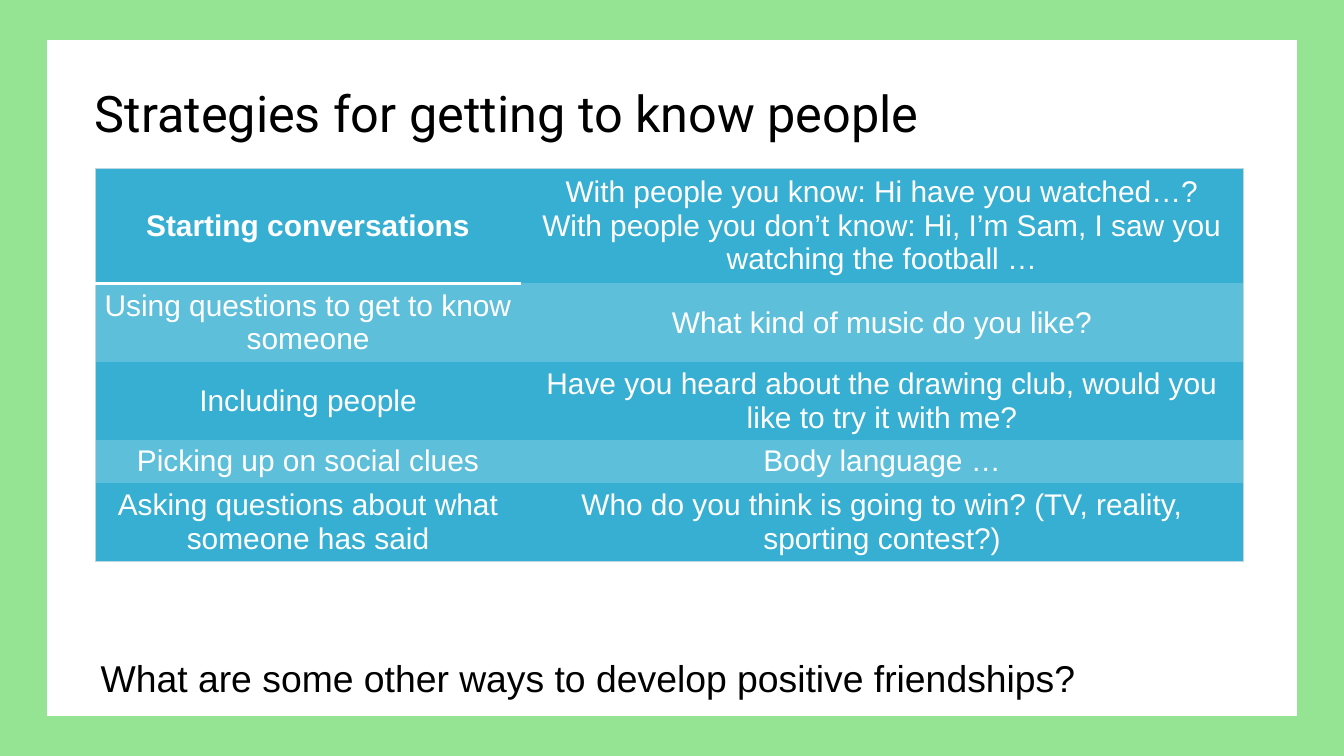
from dataclasses import dataclass

from lxml.etree import SubElement
from pptx import Presentation
from pptx.dml.color import RGBColor
from pptx.enum.text import MSO_ANCHOR, MSO_AUTO_SIZE, PP_ALIGN
from pptx.oxml.ns import qn
from pptx.util import Pt


@dataclass(frozen=True)
class Theme:
    """Colours, fonts and type sizes of the slide."""
    background: str = "94E494"
    panel: str = "FFFFFF"
    ink: str = "000000"
    table_text: str = "FFFFFF"
    bands: tuple = ("36AFD2", "5EBFDB")
    outline: str = "BCD7E1"
    header_rule: str = "FFFFFF"
    title_font: str = "Roboto"
    body_font: str = "Arial"
    title_size: int = 54
    table_size: int = 32
    question_size: int = 40


THEME = Theme()
STRATEGIES = [
    ("Starting conversations",
     "With people you know: Hi have you watched…?\n"
     "With people you don’t know: Hi, I’m Sam, I saw you watching the football …"),
    ("Using questions to get to know someone", "What kind of music do you like?"),
    ("Including people",
     "Have you heard about the drawing club, would you like to try it with me?"),
    ("Picking up on social clues", "Body language …"),
    ("Asking questions about what someone has said",
     "Who do you think is going to win? (TV, reality, sporting contest?)"),
]
COLUMN_WIDTHS = (456, 774)
ROW_HEIGHTS = (123, 84, 84, 45, 84)


def style_text(para, font, size, colour, bold=False):
    """Format every run of a paragraph."""
    for span in para.runs:
        span.font.name = font
        span.font.size = Pt(size)
        span.font.bold = bold
        span.font.color.rgb = RGBColor.from_string(colour)


def add_panel(page, left, top, width, height):
    """Draw the white panel that carries the content."""
    builder = page.shapes.build_freeform(Pt(left), Pt(top))
    right, bottom = left + width, top + height
    corners = [(right, top), (right, bottom), (left, bottom)]
    builder.add_line_segments([(Pt(x), Pt(y)) for x, y in corners], close=True)
    panel = builder.convert_to_shape()
    panel.shadow.inherit = False
    panel.fill.solid()
    panel.fill.fore_color.rgb = RGBColor.from_string(THEME.panel)
    panel.line.fill.background()


def add_text(page, text, bounds, font, size, inset=None, spacing=None):
    """Place one line of text in a wrapping box."""
    box = page.shapes.add_textbox(*map(Pt, bounds))
    frame = box.text_frame
    frame.word_wrap = True
    frame.auto_size = MSO_AUTO_SIZE.SHAPE_TO_FIT_TEXT
    if inset is not None:
        frame.margin_left = frame.margin_right = Pt(inset)
        frame.margin_top = frame.margin_bottom = Pt(inset)
    frame.text = text
    para = frame.paragraphs[0]
    if spacing is not None:
        para.line_spacing = Pt(spacing)
    style_text(para, font, size, THEME.ink)


def add_border(cell, side, colour=None, width=0.75):
    """Give one side of a cell a solid line, or none without a colour."""
    line = SubElement(cell._tc.get_or_add_tcPr(), qn(f"a:ln{side}"), w=str(Pt(width)))
    if colour is None:
        SubElement(line, qn("a:noFill"))
    else:
        fill = SubElement(line, qn("a:solidFill"))
        SubElement(fill, qn("a:srgbClr"), val=colour)


def style_borders(cell, row, column):
    """Outline the table and rule off the first heading."""
    last_row, last_column = len(STRATEGIES) - 1, len(COLUMN_WIDTHS) - 1
    outer = {"L": column == 0, "R": column == last_column,
             "T": row == 0, "B": row == last_row}
    for side, is_outer in outer.items():
        if column == 0 and (row, side) in ((0, "B"), (1, "T")):
            add_border(cell, side, THEME.header_rule, 3)
        else:
            add_border(cell, side, THEME.outline if is_outer else None)


def fill_cell(cell, text, row, column):
    """Write and format one table cell."""
    style_borders(cell, row, column)
    cell.fill.solid()
    cell.fill.fore_color.rgb = RGBColor.from_string(THEME.bands[row % 2])
    cell.vertical_anchor = MSO_ANCHOR.MIDDLE
    cell.text_frame.text = text
    for para in cell.text_frame.paragraphs:
        para.alignment = PP_ALIGN.CENTER
        style_text(para, THEME.body_font, THEME.table_size, THEME.table_text,
                   bold=row == column == 0)


def add_strategy_table(page, left, top):
    """Build the table of strategies and examples."""
    table = page.shapes.add_table(
        len(STRATEGIES), len(COLUMN_WIDTHS), Pt(left), Pt(top),
        Pt(sum(COLUMN_WIDTHS)), Pt(sum(ROW_HEIGHTS))).table
    for column, width in zip(table.columns, COLUMN_WIDTHS):
        column.width = Pt(width)
    for row, height in zip(table.rows, ROW_HEIGHTS):
        row.height = Pt(height)
    for row, texts in enumerate(STRATEGIES):
        for column, text in enumerate(texts):
            fill_cell(table.cell(row, column), text, row, column)


def main():
    """Build the slide and save the deck."""
    deck = Presentation()
    deck.slide_width, deck.slide_height = Pt(1440), Pt(810)
    page = deck.slides.add_slide(deck.slide_layouts[6])
    page.background.fill.solid()
    page.background.fill.fore_color.rgb = RGBColor.from_string(THEME.background)
    add_panel(page, 50.4, 43.2, 1339.6, 723.6)
    add_text(page, "Strategies for getting to know people", (101.5, 74.2, 1098, 75),
             THEME.title_font, THEME.title_size, inset=0, spacing=78.4)
    add_strategy_table(page, 102.2, 180.7)
    add_text(page, "What are some other ways to develop positive friendships?",
             (100.8, 698.4, 1230, 55.4), THEME.body_font, THEME.question_size)
    deck.save("out.pptx")


if __name__ == "__main__":
    main()
